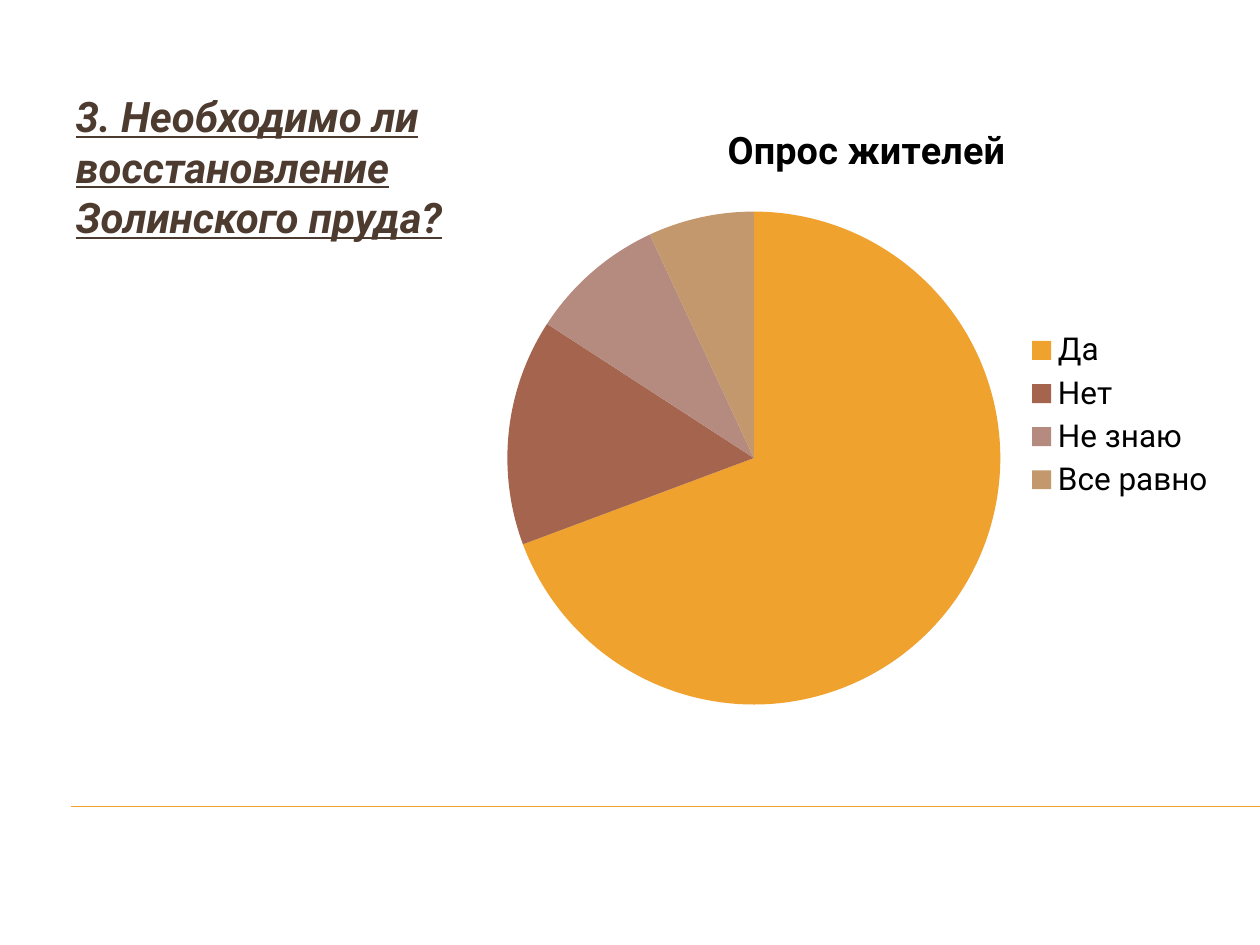
from lxml.etree import SubElement
from pptx import Presentation
from pptx.chart.data import CategoryChartData
from pptx.dml.color import RGBColor
from pptx.enum.chart import XL_CHART_TYPE, XL_LEGEND_POSITION
from pptx.enum.text import MSO_ANCHOR, MSO_AUTO_SIZE, PP_ALIGN
from pptx.oxml.ns import qn
from pptx.util import Inches, Pt

QUESTION = "3. Необходимо ли восстановление Золинского пруда?"
SURVEY = "Опрос жителей"
ANSWERS = [
    ("Да", 70, "F0A22E"),
    ("Нет", 15, "A5644E"),
    ("Не знаю", 9, "B58B80"),
    ("Все равно", 7, "C3986D"),
]
THEME = {
    "font": "Roboto", "ink": "4E3B30", "black": "000000", "rule": "F0A22E",
    "question": 24, "title": 21.6, "legend": 18,
}
WIDE, HIGH = 10, 7.5
TOP, TALL = 0.67, 5.25
TEXT_BOX = (0.5, TOP, 3.29, TALL)
CHART_BOX = (3.91, TOP, 5.84, TALL)
RULE = (0.56, 6.4, WIDE, 6.4)
PIE = {"x": 0.02, "y": 0.19, "w": 0.67, "h": 0.75}
HEAD = {"x": 0.31, "y": 0.05}


def inches(box):
    return [Inches(n) for n in box]


def style(font, size, color, bold=False):
    font.name = THEME["font"]
    font.size = Pt(size)
    font.bold = bold
    font.color.rgb = RGBColor.from_string(color)


def arrange(layout, place, inner=False):
    manual = SubElement(layout, qn("c:manualLayout"))
    if inner:
        SubElement(manual, qn("c:layoutTarget"), val="inner")
    for axis in "xy":
        SubElement(manual, qn(f"c:{axis}Mode"), val="edge")
    for key, part in place.items():
        SubElement(manual, qn(f"c:{key}"), val=str(part))


def add_rule(slide):
    x1, y1, x2, y2 = inches(RULE)
    rule = slide.shapes.add_connector(1, x1, y1, x2, y2)
    rule.line.color.rgb = RGBColor.from_string(THEME["rule"])
    rule.line.width = Pt(0.75)
    SubElement(rule._element.spPr, qn("a:effectLst"))


def add_question(slide):
    title = slide.shapes.title
    title.left, title.top, title.width, title.height = inches(TEXT_BOX)
    frame = title.text_frame
    frame.word_wrap = True
    frame.auto_size = MSO_AUTO_SIZE.NONE
    frame.vertical_anchor = MSO_ANCHOR.TOP
    para = frame.paragraphs[0]
    para.alignment = PP_ALIGN.LEFT
    run = para.add_run()
    run.text = QUESTION
    style(run.font, THEME["question"], THEME["ink"], True)
    run.font.italic = True
    run.font.underline = True


def add_survey(slide):
    names, counts, colors = zip(*ANSWERS)
    data = CategoryChartData()
    data.categories = names
    data.add_series(SURVEY, counts)
    chart = slide.shapes.add_chart(
        XL_CHART_TYPE.PIE, *inches(CHART_BOX), data).chart
    style(chart.font, THEME["legend"], THEME["black"])

    chart.has_title = True
    run = chart.chart_title.text_frame.paragraphs[0].add_run()
    run.text = SURVEY
    style(run.font, THEME["title"], THEME["black"], True)
    head = chart.chart_title._element
    head.find(qn("c:overlay")).set("val", "1")
    arrange(head.find(qn("c:layout")), HEAD)

    chart.has_legend = True
    chart.legend.position = XL_LEGEND_POSITION.RIGHT
    chart.legend.include_in_layout = True
    style(chart.legend.font, THEME["legend"], THEME["black"])

    plot = chart.plots[0]
    plot.vary_by_categories = True
    for i, color in enumerate(colors):
        fill = plot.series[0].points[i].format.fill
        fill.solid()
        fill.fore_color.rgb = RGBColor.from_string(color)

    area = plot._element.getparent()
    for old in area.findall(qn("c:layout")):
        area.remove(old)
    layout = SubElement(area, qn("c:layout"))
    area.insert(0, layout)
    arrange(layout, PIE, True)


def main():
    deck = Presentation()
    deck.slide_width, deck.slide_height = Inches(WIDE), Inches(HIGH)
    slide = deck.slides.add_slide(deck.slide_layouts[5])
    add_rule(slide)
    add_question(slide)
    add_survey(slide)
    deck.save("out.pptx")


if __name__ == "__main__":
    main()
